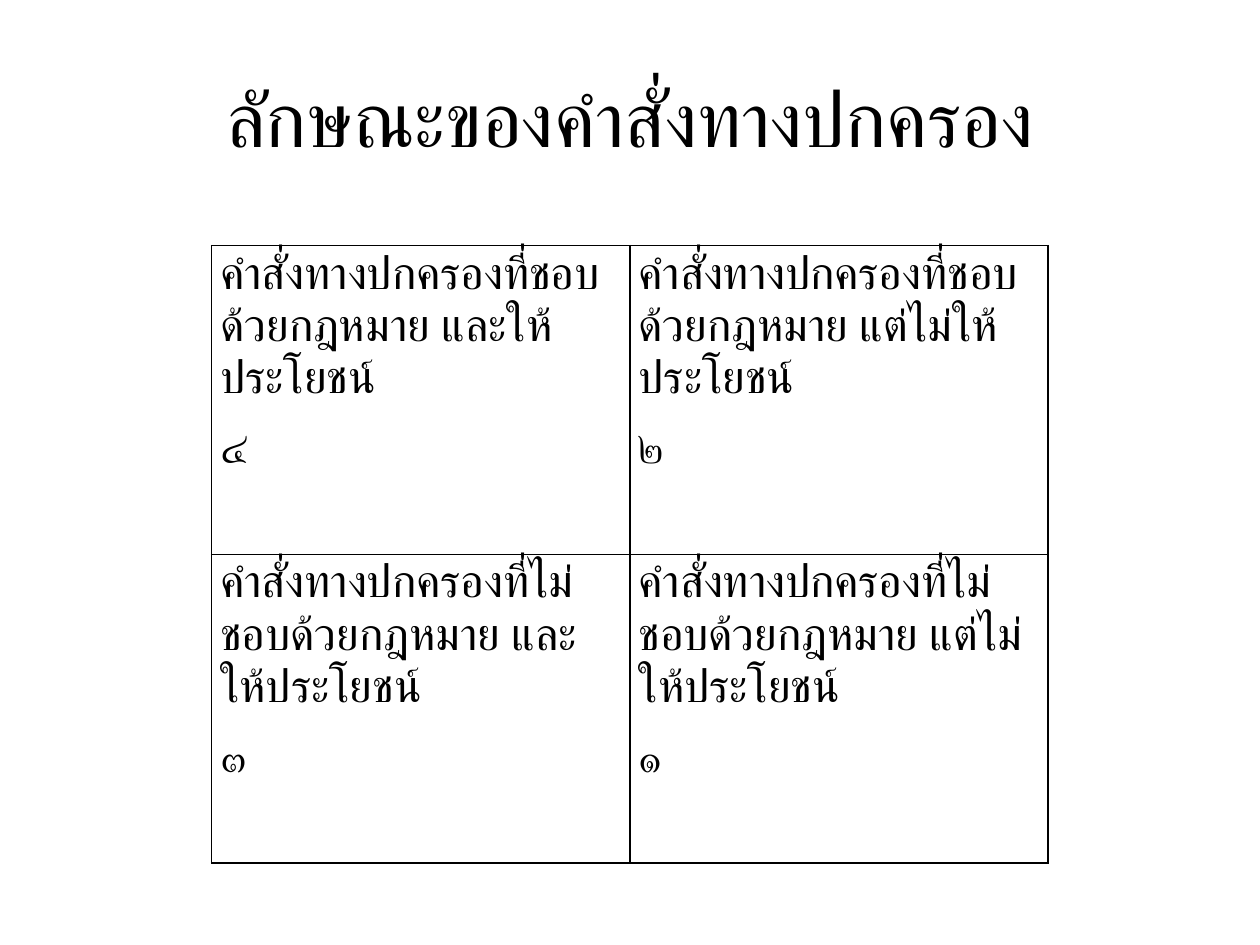
from lxml.etree import SubElement
from pptx import Presentation
from pptx.dml.color import RGBColor
from pptx.enum.lang import MSO_LANGUAGE_ID as Language
from pptx.enum.text import MSO_ANCHOR as Anchor, PP_ALIGN as Align
from pptx.oxml.ns import qn
from pptx.util import Inches, Pt

# Content
TITLE = "ลักษณะของคำสั่งทางปกครอง"
ORDERS = [
    [("คำสั่งทางปกครองที่ชอบด้วยกฎหมาย และให้ประโยชน์", "๔"),
     ("คำสั่งทางปกครองที่ชอบด้วยกฎหมาย แต่ไม่ให้ประโยชน์", "๒")],
    [("คำสั่งทางปกครองที่ไม่ชอบด้วยกฎหมาย และให้ประโยชน์", "๓"),
     ("คำสั่งทางปกครองที่ไม่ชอบด้วยกฎหมาย แต่ไม่ให้ประโยชน์", "๑")],
]
FONT = "Calibri"
BLACK = RGBColor(0, 0, 0)
COLUMN_WIDTH, ROW_HEIGHT = 3.32, 2.45


def style_text(paragraph, size):
    for run in paragraph.runs:
        run.font.name = FONT
        run.font.size = Pt(size)
        run.font.color.rgb = BLACK
        run.font.language_id = Language.THAI


def add_borders(cell):
    properties = cell._tc.get_or_add_tcPr()
    for side in ("lnL", "lnR", "lnT", "lnB"):
        line = SubElement(properties, qn(f"a:{side}"), w=str(Pt(1)))
        fill = SubElement(line, qn("a:solidFill"))
        SubElement(fill, qn("a:srgbClr"), val=str(BLACK))


def fill_cell(cell, lines):
    cell.margin_left = cell.margin_right = Inches(0.07)
    cell.margin_top = cell.margin_bottom = 0
    cell.text_frame.text = "\n".join(lines)
    for paragraph in cell.text_frame.paragraphs:
        paragraph.line_spacing = 1.15
        paragraph.space_after = Pt(10)
        style_text(paragraph, 26)
    add_borders(cell)
    cell.fill.background()


presentation = Presentation()
presentation.slide_width, presentation.slide_height = Inches(10), Inches(7.5)
slide = presentation.slides.add_slide(presentation.slide_layouts[6])

# Title
title = slide.shapes.add_textbox(
    Inches(0.5), Inches(0.3), Inches(9), Inches(1.25)).text_frame
title.word_wrap = True
title.vertical_anchor = Anchor.MIDDLE
title.text = TITLE
title.paragraphs[0].alignment = Align.CENTER
style_text(title.paragraphs[0], 44)

# Table of administrative orders
row_count, column_count = len(ORDERS), len(ORDERS[0])
order_table = slide.shapes.add_table(
    row_count, column_count, Inches(1.68), Inches(1.95),
    Inches(COLUMN_WIDTH * column_count), Inches(ROW_HEIGHT * row_count)).table
order_table.first_row = order_table.horz_banding = False
for row, orders in enumerate(ORDERS):
    for column, lines in enumerate(orders):
        fill_cell(order_table.cell(row, column), lines)

presentation.save("out.pptx")
